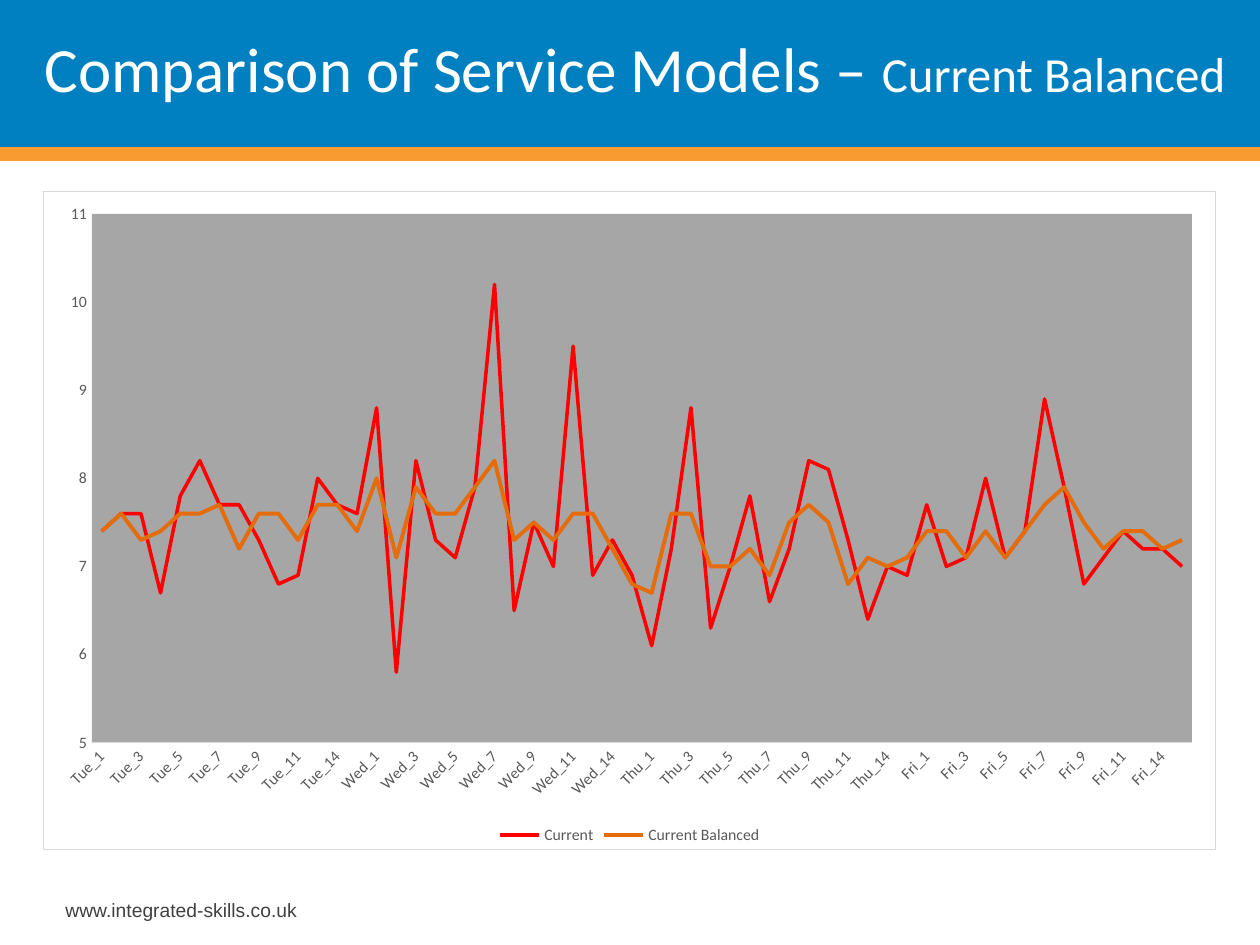
from lxml.etree import SubElement
from pptx import Presentation
from pptx.chart.data import CategoryChartData
from pptx.dml.color import RGBColor
from pptx.enum.chart import XL_CHART_TYPE, XL_LEGEND_POSITION, XL_TICK_MARK
from pptx.enum.shapes import MSO_CONNECTOR, MSO_SHAPE
from pptx.enum.text import MSO_ANCHOR, MSO_AUTO_SIZE, PP_ALIGN
from pptx.oxml import parse_xml
from pptx.oxml.ns import nsdecls, qn
from pptx.util import Pt

# Content
TITLE = [("Comparison of Service Models – ", 36), ("Current Balanced", 28)]
SITE = "www.integrated-skills.co.uk"
DAYS = ["Tue", "Wed", "Thu", "Fri"]
ROUNDS = [*range(1, 13), 14, 15]
SERIES = [  # name, colour, line width, one row of values per day
    ("Current", "red", 2, [
        [7.4, 7.6, 7.6, 6.7, 7.8, 8.2, 7.7, 7.7, 7.3, 6.8, 6.9, 8, 7.7, 7.6],
        [8.8, 5.8, 8.2, 7.3, 7.1, 7.9, 10.2, 6.5, 7.5, 7, 9.5, 6.9, 7.3, 6.9],
        [6.1, 7.2, 8.8, 6.3, 7, 7.8, 6.6, 7.2, 8.2, 8.1, 7.3, 6.4, 7, 6.9],
        [7.7, 7, 7.1, 8, 7.1, 7.4, 8.9, 7.9, 6.8, 7.1, 7.4, 7.2, 7.2, 7],
    ]),
    ("Current Balanced", "rust", 2.25, [
        [7.4, 7.6, 7.3, 7.4, 7.6, 7.6, 7.7, 7.2, 7.6, 7.6, 7.3, 7.7, 7.7, 7.4],
        [8, 7.1, 7.9, 7.6, 7.6, 7.9, 8.2, 7.3, 7.5, 7.3, 7.6, 7.6, 7.2, 6.8],
        [6.7, 7.6, 7.6, 7, 7, 7.2, 6.9, 7.5, 7.7, 7.5, 6.8, 7.1, 7, 7.1],
        [7.4, 7.4, 7.1, 7.4, 7.1, 7.4, 7.7, 7.9, 7.5, 7.2, 7.4, 7.4, 7.2, 7.3],
    ]),
]
HEX = {"blue": "0080C0", "orange": "F89C31", "white": "FFFFFF",
       "dark": "404040", "text": "595959", "edge": "D9D9D9",
       "plot": "A6A6A6", "red": "FF0000", "rust": "E46C0A"}
SCALE = 914400 / 126


def px(*nums):
    return [round(n * SCALE) for n in nums]


def tint(name):
    return RGBColor.from_string(HEX[name])


def style(font, size, name, face="Calibri"):
    font.size, font.name, font.color.rgb = Pt(size), face, tint(name)


def area(fill, edge=None):
    """Fill and border for a part of the chart."""
    part = parse_xml(f"<c:spPr {nsdecls('c', 'a')}/>")
    solid = SubElement(part, qn("a:solidFill"))
    SubElement(solid, qn("a:srgbClr"), val=HEX[fill])
    line = SubElement(part, qn("a:ln"), w=str(Pt(0.75)))
    if edge:
        solid = SubElement(line, qn("a:solidFill"))
        SubElement(solid, qn("a:srgbClr"), val=HEX[edge])
    else:
        SubElement(line, qn("a:noFill"))
    return part


deck = Presentation()
deck.slide_width, deck.slide_height = px(1260, 945)
slide = deck.slides.add_slide(deck.slide_layouts[5])
shapes = slide.shapes
title = shapes.title

# Site address
box = shapes.add_textbox(*px(53, 892, 260, 37))
frame = box.text_frame
frame.word_wrap = True
frame.text = SITE
style(frame.paragraphs[0].font, 11, "dark", "Arial")

# Header band and rule
band = shapes.add_shape(MSO_SHAPE.RECTANGLE, *px(0, 0, 1260, 157))
band.shadow.inherit = False
band.fill.solid()
band.fill.fore_color.rgb = tint("blue")
band.line.fill.background()
rule = shapes.add_connector(MSO_CONNECTOR.STRAIGHT, *px(0, 154, 1260, 154))
rule.line.color.rgb = tint("orange")
rule.line.width = Pt(7.75)
SubElement(rule._element.spPr, qn("a:effectLst"))

# Chart
data = CategoryChartData(number_format="0.0")
data.categories = [f"{day}_{n}" for day in DAYS for n in ROUNDS]
for name, _, _, rows in SERIES:
    data.add_series(name, sum(rows, []))
chart = shapes.add_chart(XL_CHART_TYPE.LINE, *px(43, 191, 1173, 659), data).chart
chart.has_title = False
style(chart.font, 10, "text")
chart.plots[0].vary_by_categories = False
for line, (_, name, width, _) in zip(chart.plots[0].series, SERIES):
    line.smooth = False
    line.format.line.color.rgb = tint(name)
    line.format.line.width = Pt(width)

# Axes and legend
cat, val = chart.category_axis, chart.value_axis
for axis in (cat, val):
    axis.has_major_gridlines = False
    axis.major_tick_mark = axis.minor_tick_mark = XL_TICK_MARK.NONE
    style(axis.tick_labels.font, 9, "text")
cat.format.line.color.rgb = tint("edge")
cat.format.line.width = Pt(0.75)
cat._element.find(qn("c:txPr")).find(qn("a:bodyPr")).set("rot", "-2700000")
val.format.line.fill.background()
val.minimum_scale, val.maximum_scale, val.major_unit = 5, 11, 1
val.tick_labels.number_format = "0"
val.tick_labels.number_format_is_linked = False
chart.has_legend = True
chart.legend.position = XL_LEGEND_POSITION.BOTTOM
chart.legend.include_in_layout = False
style(chart.legend.font, 9, "text")

# Chart and plot backgrounds
body = chart._chartSpace.find(qn("c:chart"))
body.addnext(area("white", "edge"))
body.find(qn("c:plotArea")).append(area("plot"))

# Title, in front of the band
shapes._spTree.append(title._element)
title.left, title.top, title.width, title.height = px(32, 4, 1228, 126)
frame = title.text_frame
frame.word_wrap = True
frame.auto_size = MSO_AUTO_SIZE.NONE
frame.vertical_anchor = MSO_ANCHOR.MIDDLE
para = frame.paragraphs[0]
para.alignment = PP_ALIGN.LEFT
for text, size in TITLE:
    run = para.add_run()
    run.text = text
    style(run.font, size, "white")

deck.save("out.pptx")
